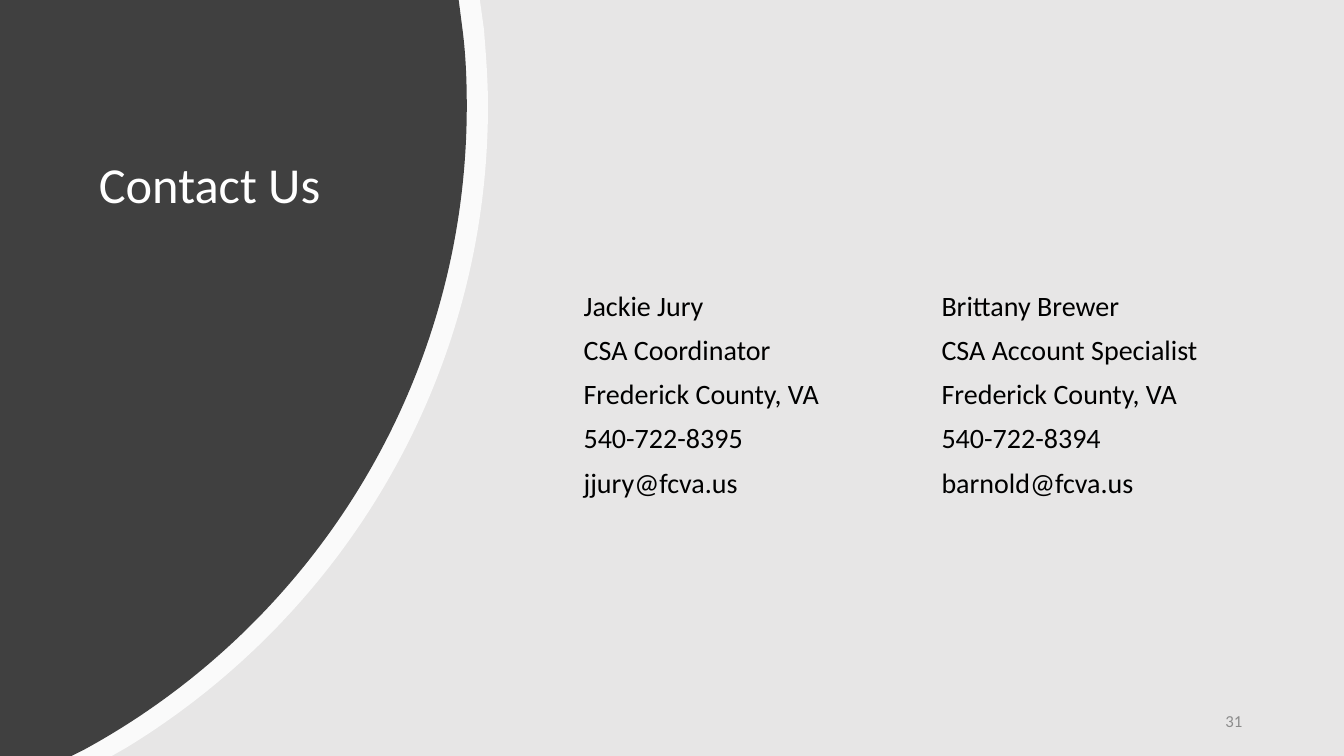
import pptx
import pptx.dml.color
import pptx.enum.text
import pptx.oxml
import pptx.oxml.ns
import pptx.util

Inches = pptx.util.Inches
Pt = pptx.util.Pt
Align = pptx.enum.text.PP_ALIGN
Anchor = pptx.enum.text.MSO_ANCHOR
qn = pptx.oxml.ns.qn
NAMESPACE = pptx.oxml.ns.nsdecls("a")

COLORS = {
    "background": "E7E6E6",
    "rim": "FFFFFF",
    "panel": "404040",
    "title": "FFFFFF",
    "body": "000000",
    "number": "8C8C8C",
}
CONTACTS = [
    ["Jackie Jury", "CSA Coordinator", "Frederick County, VA", "540-722-8395", "jjury@fcva.us"],
    ["Brittany Brewer", "CSA Account Specialist", "Frederick County, VA", "540-722-8394", "barnold@fcva.us"],
]


def rgb(name):
    return pptx.dml.color.RGBColor.from_string(COLORS[name])


def bend(segments):
    curve = pptx.oxml.parse_xml(f"<a:cubicBezTo {NAMESPACE}/>")
    segments[0].addprevious(curve)
    for segment in segments:
        curve.append(segment[0])
        segment.getparent().remove(segment)


def write_text(frame, text, font="Calibri", size=20, color="body", align=Align.LEFT,
               anchor=Anchor.MIDDLE, line_spacing=1.0, space_before=0):
    frame.word_wrap = True
    frame.auto_size = pptx.enum.text.MSO_AUTO_SIZE.NONE
    frame.vertical_anchor = anchor
    frame.text = text
    for paragraph in frame.paragraphs:
        paragraph.alignment = align
        paragraph.line_spacing = line_spacing
        paragraph.space_before = Pt(space_before)
        for run in paragraph.runs:
            run.font.name = font
            run.font.size = Pt(size)
            run.font.color.rgb = rgb(color)


class ContactSlide:
    def __init__(self, presentation):
        self.slide = presentation.slides.add_slide(presentation.slide_layouts[5])
        fill = self.slide.background.fill
        fill.solid()
        fill.fore_color.rgb = rgb("background")

    def curved_panel(self, color, edge, upper_arc, lower_arc, bottom_right, opacity=100):
        outline = [*edge, *upper_arc, *lower_arc, bottom_right, (0, 7.5)]
        builder = self.slide.shapes.build_freeform(0, 0)
        builder.add_line_segments([(Inches(x), Inches(y)) for x, y in outline], close=True)
        panel = builder.convert_to_shape()
        segments = list(panel.element.iter(qn("a:lnTo")))
        bend(segments[2:5])
        bend(segments[5:8])
        panel.shadow.inherit = False
        panel.line.fill.background()
        panel.fill.solid()
        panel.fill.fore_color.rgb = rgb(color)
        if opacity < 100:
            swatch = panel.element.spPr.find(".//" + qn("a:srgbClr"))
            swatch.append(pptx.oxml.parse_xml(f'<a:alpha {NAMESPACE} val="{opacity * 1000}"/>'))

    def title(self, text, left, top, width, height, **style):
        heading = self.slide.shapes.title
        heading.left, heading.top = Inches(left), Inches(top)
        heading.width, heading.height = Inches(width), Inches(height)
        heading.element.getparent().append(heading.element)
        write_text(heading.text_frame, text, **style)

    def text(self, text, left, top, width, height, **style):
        box = self.slide.shapes.add_textbox(Inches(left), Inches(top), Inches(width), Inches(height))
        write_text(box.text_frame, text, **style)


def main():
    presentation = pptx.Presentation()
    presentation.slide_width = Inches(13.33)
    presentation.slide_height = Inches(7.5)

    page = ContactSlide(presentation)
    page.curved_panel("rim", [(4.76, 0), (4.8, 0.29)],
                      [(4.82, 0.54), (4.84, 0.8), (4.84, 1.05)],
                      [(4.84, 3.75), (3.4, 6.11), (1.25, 7.42)],
                      (1.11, 7.5), opacity=80)
    page.curved_panel("panel", [(4.55, 0), (4.59, 0.31)],
                      [(4.62, 0.55), (4.63, 0.8), (4.63, 1.05)],
                      [(4.63, 3.81), (3.09, 6.21), (0.83, 7.44)],
                      (0.71, 7.5))
    page.title("Contact Us", 0.88, 1.54, 3.14, 2.36, size=36, color="title",
               anchor=Anchor.TOP, line_spacing=0.9)
    for column, contact in enumerate(CONTACTS):
        page.text("\n".join(contact), 5.69 + column * 3.55, 1.54, 3.2, 4.77,
                  line_spacing=0.9, space_before=10)
    page.text("31", 9.42, 6.95, 3, 0.4, size=12, color="number", align=Align.RIGHT)

    presentation.save("out.pptx")


if __name__ == "__main__":
    main()
